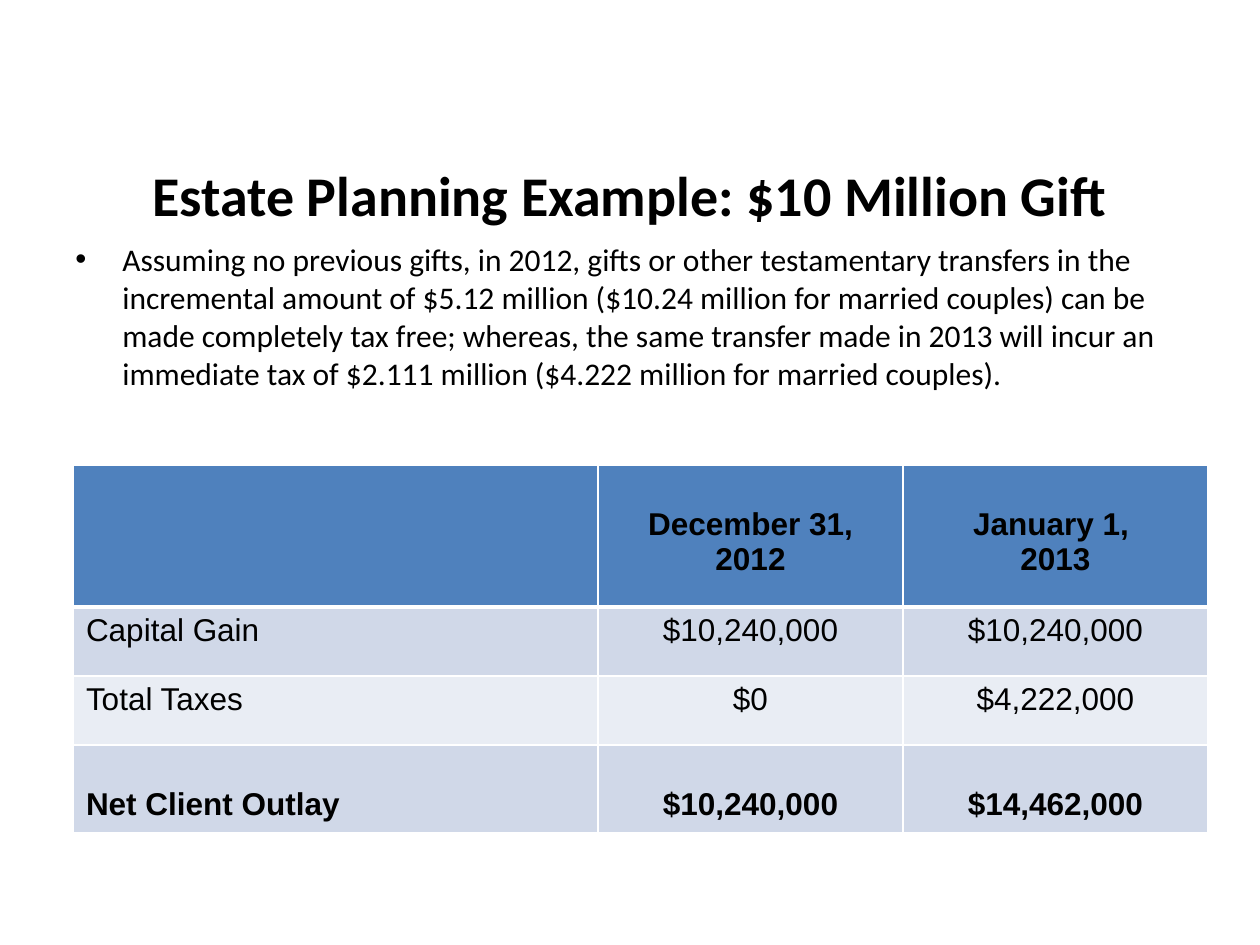
from lxml.etree import SubElement as Sub
from pptx import Presentation
from pptx.dml.color import RGBColor as Rgb
from pptx.enum.text import MSO_ANCHOR as Anchor, PP_ALIGN as Align
from pptx.oxml.ns import qn
from pptx.util import Pt

SCALE = 914400 / 126
HEX = {"ink": "000000", "line": "FFFFFF", "head": "4F81BD",
       "dark": "D0D8E8", "light": "E9EDF4"}
TITLE = "Estate Planning Example: $10 Million Gift"
BODY = ("Assuming no previous gifts, in 2012, gifts or other testamentary "
        "transfers in the incremental amount of $5.12 million ($10.24 million "
        "for married couples) can be made completely tax free; whereas, the "
        "same transfer made in 2013 will incur an immediate tax of $2.111 "
        "million ($4.222 million for married couples).")
COLS = [525, 305, 305]
ROWS = [
    (142, "head", True, 42, ["", "December 31, 2012", "January 1, \n2013"]),
    (69, "dark", False, 6, ["Capital Gain", "$10,240,000", "$10,240,000"]),
    (69, "light", False, 6, ["Total Taxes", "$0", "$4,222,000"]),
    (88, "dark", True, 42, ["Net Client Outlay", "$10,240,000", "$14,462,000"]),
]


def px(n):
    """Turn px into EMU."""
    return round(n * SCALE)


def style(frame, align, **font):
    """Align all paragraphs and set the font of their runs."""
    for para in frame.paragraphs:
        para.alignment = align
        for run in para.runs:
            for key, val in font.items():
                setattr(run.font, key, val)
            run.font.color.rgb = Rgb.from_string(HEX["ink"])


def add_text(slide, box, text, align, anchor, **font):
    """Add a wrapped text box and return its frame."""
    frame = slide.shapes.add_textbox(*map(px, box)).text_frame
    frame.word_wrap = True
    frame.vertical_anchor = anchor
    frame.text = text
    style(frame, align, name="Calibri", **font)
    return frame


def add_bullet(para, indent):
    """Give a paragraph a round bullet with a hanging indent."""
    para.space_before = Pt(3.6)
    prop = para._p.get_or_add_pPr()
    prop.set("marL", str(px(indent)))
    prop.set("indent", str(-px(indent)))
    Sub(prop, qn("a:buFont"), typeface="Arial")
    Sub(prop, qn("a:buChar"), char="•")


def add_edges(cell, **widths):
    """Draw the cell borders with widths in points."""
    prop = cell._tc.get_or_add_tcPr()
    for side, width in widths.items():
        edge = Sub(prop, qn(f"a:ln{side}"), w=str(Pt(width)))
        fill = Sub(edge, qn("a:solidFill"))
        Sub(fill, qn("a:srgbClr"), val=HEX["line"])


def fill_cell(cell, text, tone, bold, top, align):
    """Set the text, margins and fill of one cell."""
    cell.text = text
    margins = {"margin_left": 13, "margin_right": 13,
               "margin_top": top, "margin_bottom": 6}
    for key, val in margins.items():
        setattr(cell, key, px(val))
    style(cell.text_frame, align, name="Arial", size=Pt(18), bold=bold)
    cell.fill.solid()
    cell.fill.fore_color.rgb = Rgb.from_string(HEX[tone])


def add_grid(slide, left, top):
    """Add the table of outlays."""
    high = sum(row[0] for row in ROWS)
    box = map(px, (left, top, sum(COLS), high))
    table = slide.shapes.add_table(len(ROWS), len(COLS), *box).table
    for col, wide in zip(table.columns, COLS):
        col.width = px(wide)
    for i, (tall, tone, bold, pad, texts) in enumerate(ROWS):
        table.rows[i].height = px(tall)
        for j, text in enumerate(texts):
            cell = table.cell(i, j)
            add_edges(cell, L=1, R=1, T=3 if i == 1 else 1, B=3 if i == 0 else 1)
            align = Align.CENTER if j else Align.LEFT
            fill_cell(cell, text, tone, bold, pad, align)


def main():
    """Build and save the slide."""
    deck = Presentation()
    deck.slide_width, deck.slide_height = px(1260), px(945)
    slide = deck.slides.add_slide(deck.slide_layouts[6])
    add_text(slide, (63, 115, 1134, 158), TITLE, Align.CENTER, Anchor.MIDDLE,
             size=Pt(32), bold=True)
    body = add_text(slide, (63, 234, 1134, 165), BODY, Align.LEFT, Anchor.TOP,
                    size=Pt(18))
    add_bullet(body.paragraphs[0], 47)
    add_grid(slide, 73, 465)
    deck.save("out.pptx")


if __name__ == "__main__":
    main()
